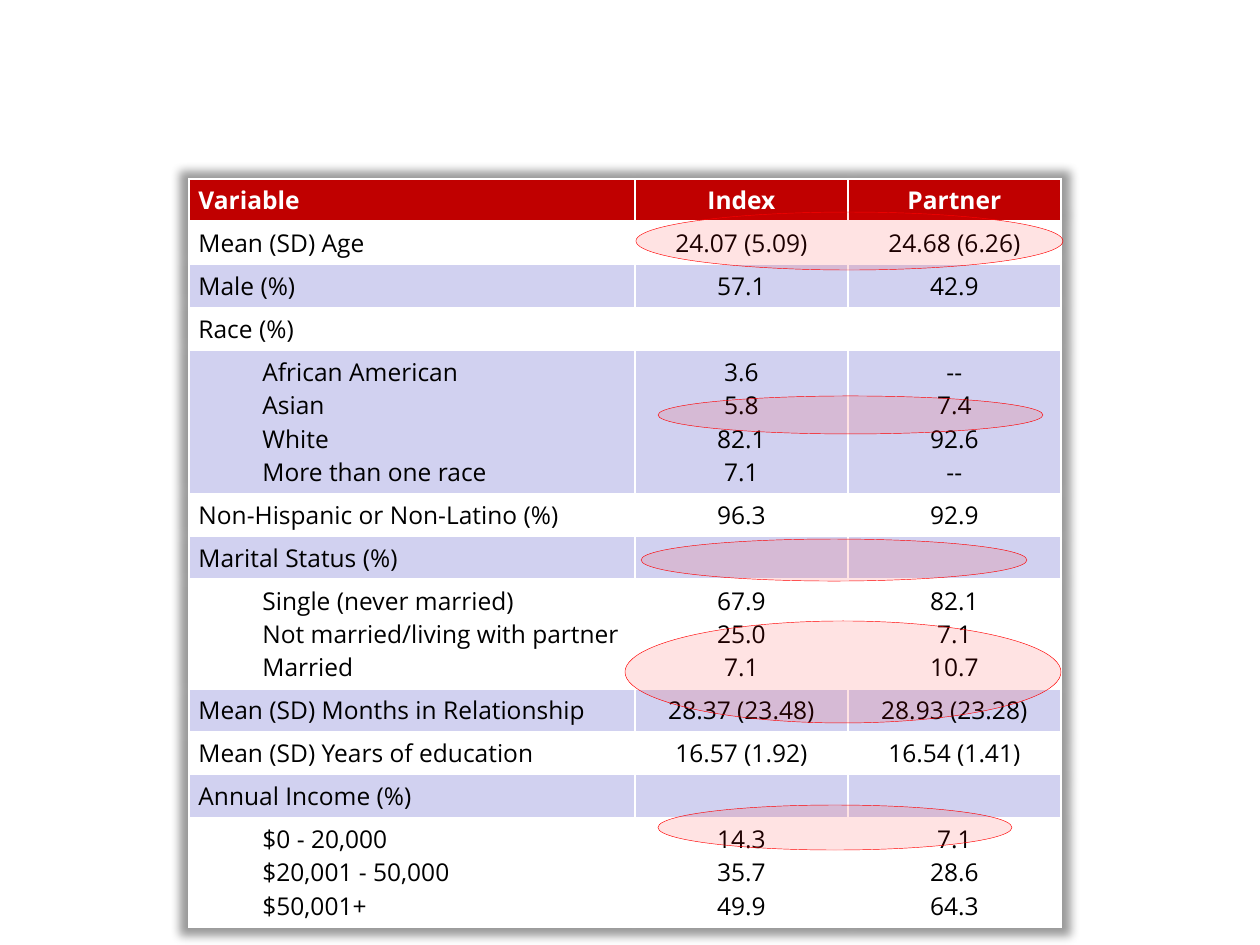
from typing import NamedTuple

import lxml.etree
import pptx
import pptx.dml.color
import pptx.enum.shapes
import pptx.enum.text
import pptx.oxml
import pptx.oxml.ns
import pptx.util

EMU_PER_PX = 914400 / 126
FONT = "Open Sans"
FONT_PT = 14
RED, WHITE, BLACK, LAVENDER, HIGHLIGHT = "C00000", "FFFFFF", "000000", "D1D1F0", "FF0000"
CENTER = pptx.enum.text.PP_ALIGN.CENTER


class Row(NamedTuple):
    labels: list[str]
    index: list[str]
    partner: list[str]
    indented: bool = False


class Ellipse(NamedTuple):
    left: int
    top: int
    width: int
    height: int


ROWS = [
    Row(["Variable"], ["Index"], ["Partner"]),
    Row(["Mean (SD) Age"], ["24.07 (5.09)"], ["24.68 (6.26)"]),
    Row(["Male (%)"], ["57.1"], ["42.9"]),
    Row(["Race (%)"], [], []),
    Row(["African American", "Asian", "White", "More than one race"],
        ["3.6", "5.8", "82.1", "7.1"], ["--", "7.4", "92.6", "--"], True),
    Row(["Non-Hispanic or Non-Latino (%)"], ["96.3"], ["92.9"]),
    Row(["Marital Status (%)"], [], []),
    Row(["Single (never married)", "Not married/living with partner", "Married"],
        ["67.9", "25.0", "7.1"], ["82.1", "7.1", "10.7"], True),
    Row(["Mean (SD) Months in Relationship"], ["28.37 (23.48)"], ["28.93 (23.28)"]),
    Row(["Mean (SD) Years of education"], ["16.57 (1.92)"], ["16.54 (1.41)"]),
    Row(["Annual Income (%)"], [], []),
    Row(["$0 - 20,000", "$20,001 - 50,000", "$50,001+"],
        ["14.3", "35.7", "49.9"], ["7.1", "28.6", "64.3"], True),
]
ROW_HEIGHTS = {1: 38, 3: 95, 4: 122}  # by number of text lines
COLUMN_WIDTHS = [446, 213, 213]

HIGHLIGHTS = [
    Ellipse(636, 212, 427, 58),
    Ellipse(658, 396, 385, 38),
    Ellipse(625, 621, 436, 102),
    Ellipse(658, 805, 354, 45),
    Ellipse(641, 539, 386, 42),
]


def px(length: int) -> pptx.util.Emu:
    return pptx.util.Emu(round(length * EMU_PER_PX))


def color(hex_code: str) -> pptx.dml.color.RGBColor:
    return pptx.dml.color.RGBColor.from_string(hex_code)


def element(xml: str):
    namespace = pptx.oxml.ns.nsdecls("a")
    return pptx.oxml.parse_xml(xml.replace(">", f" {namespace}>", 1))


def set_borders(cell, top_pt: int, bottom_pt: int) -> None:
    sides = [("L", 1), ("R", 1), ("T", top_pt), ("B", bottom_pt)]
    for position, (side, points) in enumerate(sides):
        border = element(
            f'<a:ln{side} w="{pptx.util.Pt(points)}"><a:solidFill>'
            f'<a:srgbClr val="{WHITE}"/></a:solidFill></a:ln{side}>')
        cell._tc.get_or_add_tcPr().insert(position, border)


def write_cell(cell, lines: list[str], header: bool, centered: bool, indented: bool) -> None:
    cell.margin_left = cell.margin_right = pptx.util.Pt(5.4)
    cell.margin_top = cell.margin_bottom = pptx.util.Pt(2.7)
    frame = cell.text_frame
    for number, line in enumerate(lines):
        paragraph = frame.add_paragraph() if number else frame.paragraphs[0]
        if centered:
            paragraph.alignment = CENTER
        if indented:
            properties = paragraph._p.get_or_add_pPr()
            properties.set("marL", str(px(64)))
            properties.set("indent", "0")
        run = paragraph.add_run()
        run.text = line
        run.font.name = FONT
        run.font.size = pptx.util.Pt(FONT_PT)
        run.font.bold = header
        run.font.color.rgb = color(WHITE if header else BLACK)
    if not lines:  # keeps empty cells from stretching their row
        frame.paragraphs[0]._p.append(element(
            f'<a:endParaRPr sz="{FONT_PT * 100}"><a:latin typeface="{FONT}"/></a:endParaRPr>'))


def draw_table(slide) -> None:
    heights = [ROW_HEIGHTS[len(row.labels)] for row in ROWS]
    table = slide.shapes.add_table(
        len(ROWS), len(COLUMN_WIDTHS), px(189), px(179),
        px(sum(COLUMN_WIDTHS)), px(sum(heights))).table
    table.first_row = True
    table.horz_banding = False
    # Soft shadow on all sides
    table._tbl.tblPr.insert(0, element(
        '<a:effectLst><a:outerShdw blurRad="63500" sx="102000" sy="102000" algn="ctr" '
        'rotWithShape="0"><a:srgbClr val="000000"><a:alpha val="40000"/></a:srgbClr>'
        '</a:outerShdw></a:effectLst>'))
    for column, width in zip(table.columns, COLUMN_WIDTHS):
        column.width = px(width)
    for r, (row, height) in enumerate(zip(ROWS, heights)):
        table.rows[r].height = px(height)
        header = r == 0
        fill = RED if header else (WHITE if r % 2 else LAVENDER)
        for c, lines in enumerate([row.labels, row.index, row.partner]):
            cell = table.cell(r, c)
            cell.fill.solid()
            cell.fill.fore_color.rgb = color(fill)
            set_borders(cell, 3 if r == 1 else 1, 3 if header else 1)
            write_cell(cell, lines, header, c > 0, row.indented and c == 0)


def draw_highlight(slide, ellipse: Ellipse) -> None:
    highlight = slide.shapes.add_shape(
        pptx.enum.shapes.MSO_SHAPE.OVAL, *[px(length) for length in ellipse])
    highlight.shadow.inherit = False
    highlight.fill.solid()
    highlight.fill.fore_color.rgb = color(HIGHLIGHT)
    fill_color = highlight._element.spPr.find(
        pptx.oxml.ns.qn("a:solidFill")).find(pptx.oxml.ns.qn("a:srgbClr"))
    lxml.etree.SubElement(fill_color, pptx.oxml.ns.qn("a:alpha")).set("val", "11000")
    highlight.line.color.rgb = color(HIGHLIGHT)
    highlight.line.width = pptx.util.Pt(0.25)


def main() -> None:
    deck = pptx.Presentation()
    deck.slide_width, deck.slide_height = px(1260), px(945)
    slide = deck.slides.add_slide(deck.slide_layouts[6])

    # Demographics of index cases and partners
    draw_table(slide)

    # Marked figures
    for ellipse in HIGHLIGHTS:
        draw_highlight(slide, ellipse)

    deck.save("out.pptx")


if __name__ == "__main__":
    main()
